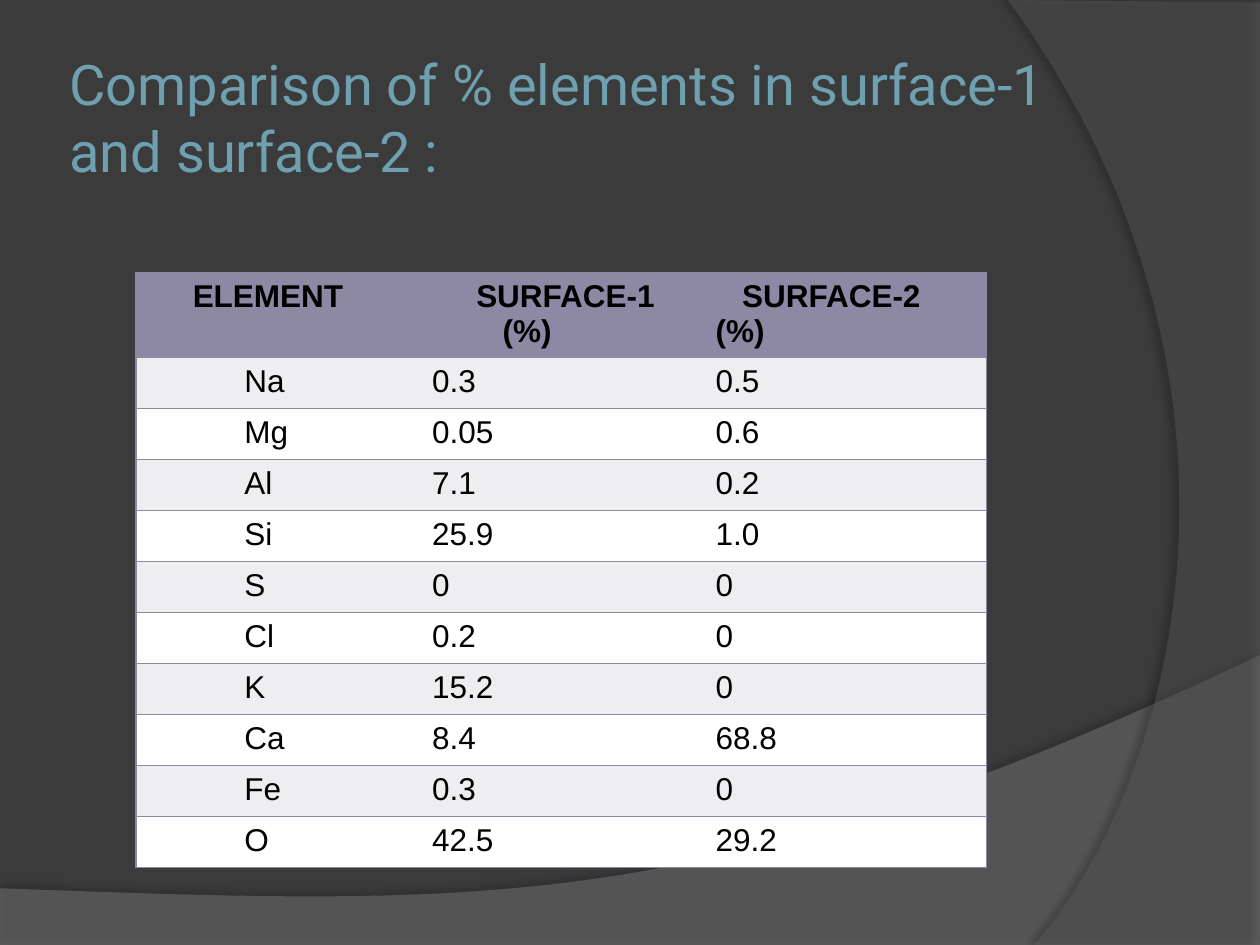
from lxml.etree import SubElement
from pptx import Presentation
from pptx.dml.color import RGBColor as Color
from pptx.enum.text import MSO_ANCHOR as Anchor, MSO_AUTO_SIZE as AutoSize, PP_ALIGN as Align
from pptx.oxml import parse_xml
from pptx.oxml.ns import nsdecls, qn
from pptx.util import Emu, Inches, Pt

BACKGROUND = Color(0x3B, 0x3B, 0x3B)
WAVE_GRAY = Color(0x7F, 0x7F, 0x7F)
ARC_GRAY = Color(0x5E, 0x5E, 0x5E)
TEAL = Color(0x6E, 0xA0, 0xB0)
PURPLE = Color(0x8D, 0x89, 0xA4)
PALE = Color(0xEE, 0xED, 0xF0)
WHITE = Color(0xFF, 0xFF, 0xFF)
BLACK = Color(0, 0, 0)

HEADERS = ["ELEMENT", "SURFACE-1\v(%)", "SURFACE-2\v(%)"]
HEADER_INDENTS = [(0.35, 0), (0.56, -0.21), (0, 0.21)]
BODY_INDENTS = [(0.76, 0), (0, 0), (0, 0)]
ELEMENTS = [
    ("Na", "0.3", "0.5"),
    ("Mg", "0.05", "0.6"),
    ("Al", "7.1", "0.2"),
    ("Si", "25.9", "1.0"),
    ("S", "0", "0"),
    ("Cl", "0.2", "0"),
    ("K", "15.2", "0"),
    ("Ca", "8.4", "68.8"),
    ("Fe", "0.3", "0"),
    ("O", "42.5", "29.2"),
]


def bezier(start, first, second, end, steps=60):
    """Return points along a cubic curve."""
    points = []
    for step in range(steps + 1):
        t = step / steps
        weights = ((1 - t) ** 3, 3 * t * (1 - t) ** 2, 3 * t * t * (1 - t), t ** 3)
        corners = (start, first, second, end)
        points.append(tuple(sum(w * c[axis] for w, c in zip(weights, corners)) for axis in (0, 1)))
    return points


class SlideBuilder:
    """Holds the style and current slide; positions are percentages of the slide."""

    title_style = {"name": "Roboto", "size": Pt(32), "bold": False}
    cell_style = {"name": "Arial", "size": Pt(18)}

    def __init__(self, deck):
        self.deck = deck
        self.page = deck.slides.add_slide(deck.slide_layouts[5])
        fill = self.page.background.fill
        fill.solid()
        fill.fore_color.rgb = BACKGROUND

    def place(self, left, top):
        return Emu(round(self.deck.slide_width * left / 100)), Emu(round(self.deck.slide_height * top / 100))

    def style(self, font, color, values):
        for name, value in values.items():
            setattr(font, name, value)
        font.color.rgb = color

    def shape(self, points, color, opacity, shade, distance, direction):
        spots = [self.place(*point) for point in points]
        builder = self.page.shapes.build_freeform(*spots[0])
        builder.add_line_segments(spots[1:], close=True)
        shape = builder.convert_to_shape()
        shape.fill.solid()
        shape.fill.fore_color.rgb = color
        shape.line.fill.background()
        tint = shape.element.spPr.find(qn("a:solidFill"))[0]
        SubElement(tint, qn("a:alpha"), val=str(opacity * 1000))
        shape.element.spPr.append(parse_xml(
            f'<a:effectLst {nsdecls("a")}><a:outerShdw blurRad="{Pt(4)}" dist="{Pt(distance)}" '
            f'dir="{direction * 60000}" algn="ctr" rotWithShape="0"><a:srgbClr val="{BLACK}">'
            f'<a:alpha val="{shade * 1000}"/></a:srgbClr></a:outerShdw></a:effectLst>'))

    def title(self, text, left, top, width, height):
        box = self.page.shapes.title
        self.page.shapes.element.append(box.element)
        box.left, box.top = self.place(left, top)
        box.width, box.height = self.place(width, height)
        frame = box.text_frame
        margins = {f"margin_{side}": Inches(0.05) for side in ("left", "right", "top", "bottom")}
        values = {"text": text, "word_wrap": True, "auto_size": AutoSize.NONE,
                  "vertical_anchor": Anchor.MIDDLE, **margins}
        for name, value in values.items():
            setattr(frame, name, value)
        para = frame.paragraphs[0]
        para.alignment = Align.LEFT
        self.style(para.runs[0].font, TEAL, self.title_style)

    def border(self, cell, sides):
        properties = cell._tc.get_or_add_tcPr()
        for index, side in enumerate("LRTB"):
            paint = f'<a:solidFill><a:srgbClr val="{PURPLE}"/></a:solidFill>' if side in sides else "<a:noFill/>"
            properties.insert(index, parse_xml(
                f'<a:ln{side} {nsdecls("a")} w="{Pt(1)}">{paint}</a:ln{side}>'))

    def cell(self, cell, text, color, bold, indent, sides):
        cell.fill.solid()
        cell.fill.fore_color.rgb = color
        self.border(cell, sides)
        cell.text_frame.text = text
        para = cell.text_frame.paragraphs[0]
        for name, length in zip(("marL", "indent"), indent):
            para._p.get_or_add_pPr().set(name, str(Inches(length)))
        for span in para.runs:
            self.style(span.font, BLACK, {**self.cell_style, "bold": bold})

    def table(self, rows, left, top, width, header_height, row_height):
        height = header_height + row_height * (len(rows) - 1)
        frame = self.page.shapes.add_table(len(rows), len(rows[0]), *self.place(left, top),
                                           *self.place(width, height))
        table = frame.table
        for r, row in enumerate(rows):
            header = r == 0
            table.rows[r].height = self.place(0, header_height if header else row_height)[1]
            color = PURPLE if header else (PALE if r % 2 else WHITE)
            indents = HEADER_INDENTS if header else BODY_INDENTS
            for c, text in enumerate(row):
                sides = "TB" + ("L" if c == 0 else "") + ("R" if c == len(row) - 1 else "")
                self.cell(table.cell(r, c), text, color, header, indents[c], sides)


def main():
    deck = Presentation()
    deck.slide_width, deck.slide_height = Inches(10), Inches(7.5)
    slide = SlideBuilder(deck)
    wave = bezier((100, 69.33), (55.9, 97.2), (39.1, 95.87), (0, 94))
    slide.shape([(0, 100), (100, 100), *wave], WAVE_GRAY, 45, 35, 3.5, 270)
    arc = bezier((82.1, 100), (93.5, 82.53), (101.8, 40), (80, 0))
    slide.shape([(100, 0.27), (100, 100), *arc], ARC_GRAY, 40, 45, 4, 180)
    slide.title("Comparison of % elements in surface-1 and surface-2 :", 5, 4, 81.7, 16.67)
    slide.table([HEADERS, *ELEMENTS], 10.8, 28.87, 67.5, 8.96, 5.4)
    deck.save("out.pptx")


if __name__ == "__main__":
    main()
